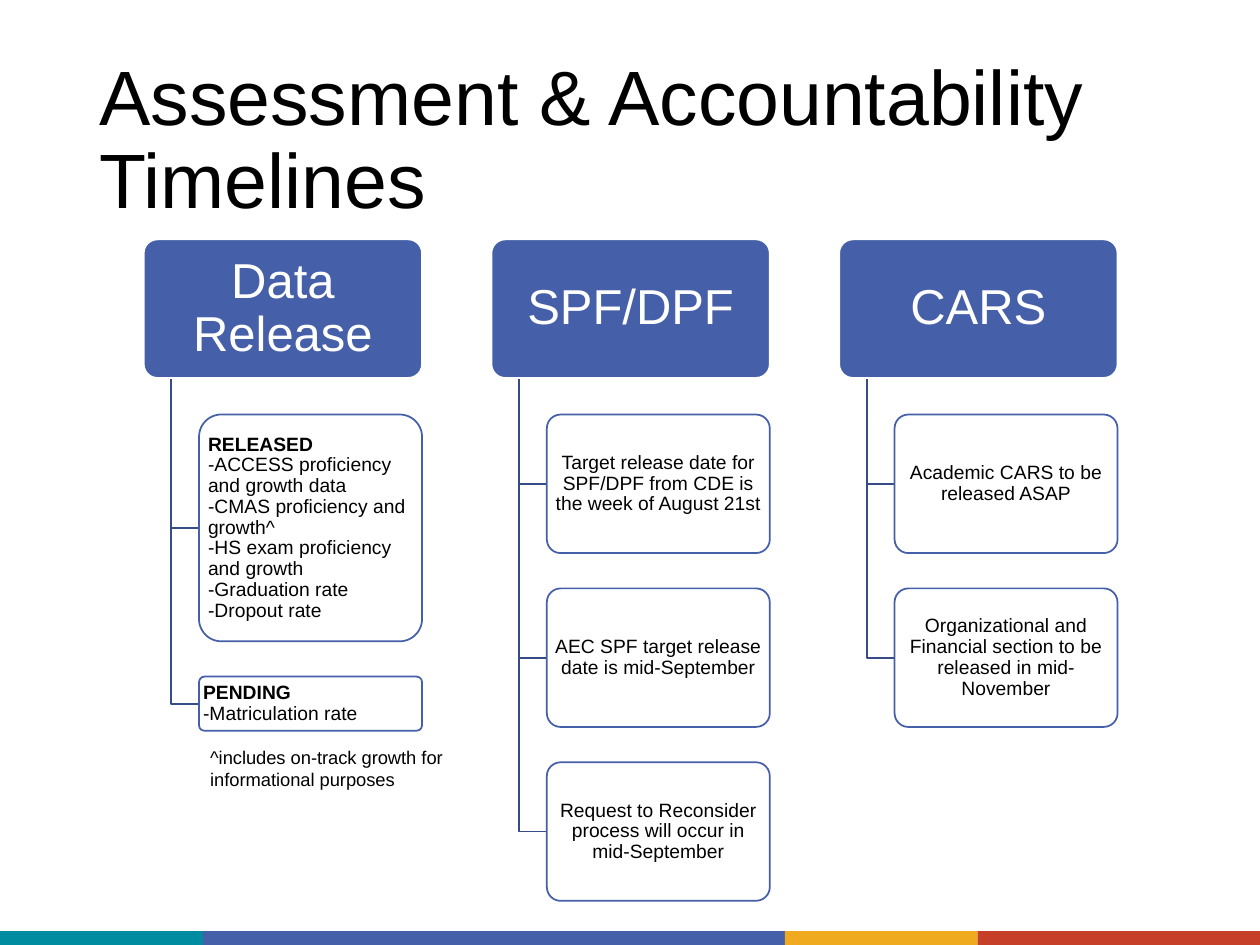
from dataclasses import dataclass

from lxml import etree
from pptx import Presentation
from pptx.dml.color import RGBColor
from pptx.enum import shapes, text
from pptx.oxml.ns import qn
from pptx.util import Inches, Pt


@dataclass(frozen=True)
class Theme:
    font: str = "Arial"
    blue: str = "455FA9"
    navy: str = "374C87"
    teal: str = "008CA0"
    amber: str = "EFAA1F"
    red: str = "C63F28"
    white: str = "FFFFFF"
    black: str = "000000"
    title: float = 44
    header: float = 28
    body: float = 11
    note: float = 10.5


THEME = Theme()


def write(shape, lines, size, color, align, insets=(0.1, 0.05), spacing=0.9, bold_first=False):
    """Fill a shape with one paragraph whose lines are split by line breaks."""
    frame = shape.text_frame
    frame.word_wrap = True
    frame.vertical_anchor = text.MSO_ANCHOR.MIDDLE
    frame.margin_left = frame.margin_right = Inches(insets[0])
    frame.margin_top = frame.margin_bottom = Inches(insets[1])
    para = frame.paragraphs[0]
    para.text = "\v".join(lines)
    para.alignment = align
    para.line_spacing = spacing
    for line_break in para._p.findall(qn("a:br")):
        etree.SubElement(line_break, qn("a:rPr"), sz=str(int(size * 100)))
    for index, span in enumerate(para.runs):
        span.font.name = THEME.font
        span.font.size = Pt(size)
        span.font.color.rgb = RGBColor.from_string(color)
        span.font.bold = bold_first and index == 0


def add_block(kind, left, top, width, height, fill, line=None):
    block = page.shapes.add_shape(kind, Inches(left), Inches(top), Inches(width), Inches(height))
    block.shadow.inherit = False
    block.fill.solid()
    block.fill.fore_color.rgb = RGBColor.from_string(fill)
    if line:
        block.adjustments[0] = 0.1
        block.line.color.rgb = RGBColor.from_string(line)
        block.line.width = Pt(1)
    else:
        block.line.fill.background()
    return block


LEFT, CENTER = text.PP_ALIGN.LEFT, text.PP_ALIGN.CENTER
RECT, ROUNDED = shapes.MSO_SHAPE.RECTANGLE, shapes.MSO_SHAPE.ROUNDED_RECTANGLE

deck = Presentation()
deck.slide_width, deck.slide_height = Inches(10), Inches(7.5)
page = deck.slides.add_slide(deck.slide_layouts[6])

# Footer stripe
stripe = [(0, THEME.teal), (1.61, THEME.blue), (6.23, THEME.amber), (7.76, THEME.red)]
ends = [start for start, _ in stripe[1:]] + [10]
for (start, color), end in zip(stripe, ends):
    add_block(RECT, start, 7.39, end - start, 0.11, color)

title = page.shapes.add_textbox(Inches(0.69), Inches(0.4), Inches(8.62), Inches(1.45))
write(title, ["Assessment & Accountability Timelines"], THEME.title, THEME.black, LEFT)

# Each column: header, alignment, and cards of (height, lines)
CARD = 1.1
columns = [
    ("Data Release", LEFT, [
        (1.8, ["RELEASED", "-ACCESS proficiency and growth data",
               "-CMAS proficiency and growth^", "-HS exam proficiency and growth",
               "-Graduation rate", "-Dropout rate"]),
        (0.43, ["PENDING", "-Matriculation rate"]),
    ]),
    ("SPF/DPF", CENTER, [
        (CARD, ["Target release date for SPF/DPF from CDE is the week of August 21st"]),
        (CARD, ["AEC SPF target release date is mid-September"]),
        (CARD, ["Request to Reconsider process will occur in mid-September"]),
    ]),
    ("CARS", CENTER, [
        (CARD, ["Academic CARS to be released ASAP"]),
        (CARD, ["Organizational and Financial section to be released in mid-November"]),
    ]),
]
COLUMN_LEFT, COLUMN_STEP = 1.14, 2.76
HEADER_TOP, HEADER_WIDTH, HEADER_BOTTOM = 1.9, 2.21, 3.01
INDENT, GAP = 0.22, 0.28

for number, (heading, align, cards) in enumerate(columns):
    left = COLUMN_LEFT + number * COLUMN_STEP
    header = add_block(ROUNDED, left, HEADER_TOP, HEADER_WIDTH, CARD, THEME.blue, THEME.white)
    write(header, [heading], THEME.header, THEME.white, CENTER, (0.06, 0.04))

    trunk, card_left = left + INDENT, left + 2 * INDENT
    top = HEADER_BOTTOM + GAP
    for height, lines in cards:
        middle = top + height / 2
        path = page.shapes.build_freeform(Inches(trunk), Inches(HEADER_BOTTOM))
        path.add_line_segments([(Inches(trunk), Inches(middle)),
                                (Inches(card_left), Inches(middle))], close=False)
        branch = path.convert_to_shape()
        branch.shadow.inherit = False
        branch.fill.background()
        branch.line.color.rgb = RGBColor.from_string(THEME.navy)
        branch.line.width = Pt(1)

        card = add_block(ROUNDED, card_left, top, HEADER_WIDTH - 2 * INDENT, height,
                         THEME.white, THEME.blue)
        fill_color = card._element.spPr.find(qn("a:solidFill")).find(qn("a:srgbClr"))
        etree.SubElement(fill_color, qn("a:alpha"), val="90000")
        write(card, lines, THEME.body, THEME.black, align, (0.02, 0.02),
              bold_first=len(lines) > 1)
        top += height + GAP

note = page.shapes.add_textbox(Inches(1.57), Inches(5.87), Inches(2.57), Inches(0.45))
write(note, ["^includes on-track growth for informational purposes"],
      THEME.note, THEME.black, LEFT, spacing=1.0)

deck.save("out.pptx")
